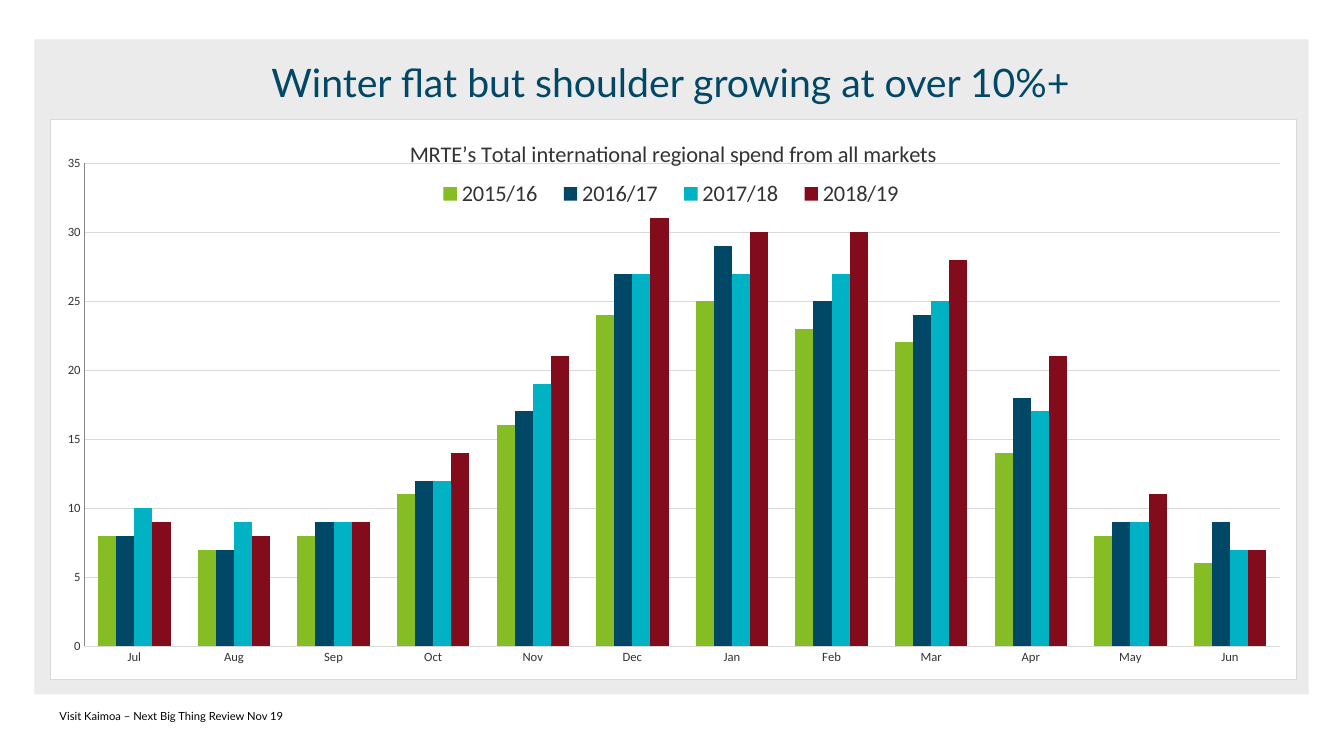
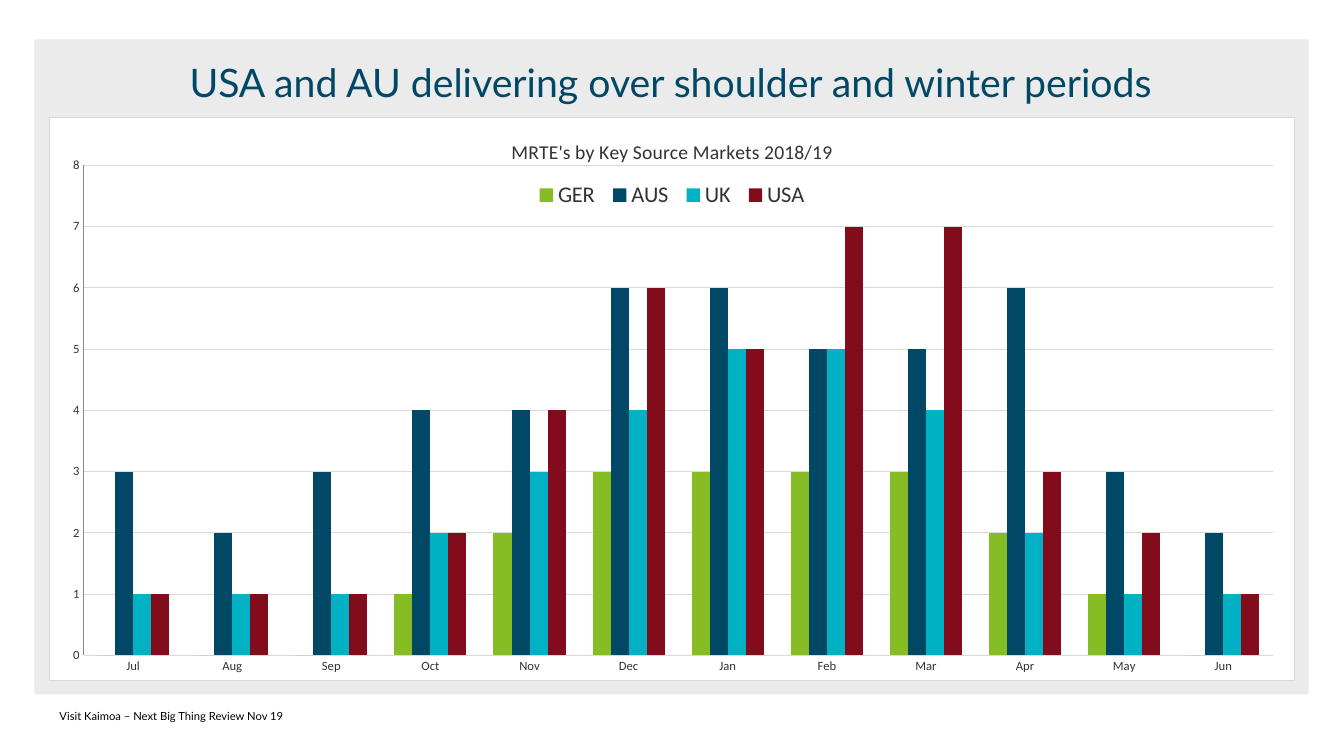
"""Build two slides of monthly visitor-spend column charts."""
from lxml import etree
from pptx import Presentation
from pptx.chart.data import CategoryChartData
from pptx.dml.color import RGBColor
from pptx.enum.chart import XL_CHART_TYPE, XL_LEGEND_POSITION, XL_TICK_MARK
from pptx.enum.shapes import MSO_SHAPE
from pptx.enum.text import MSO_ANCHOR, PP_ALIGN
from pptx.oxml import parse_xml
from pptx.oxml.ns import nsdecls, qn
from pptx.util import Inches, Pt

COLUMNS = XL_CHART_TYPE.COLUMN_CLUSTERED
BOTTOM = XL_LEGEND_POSITION.BOTTOM
NO_TICK = XL_TICK_MARK.NONE
RECTANGLE = MSO_SHAPE.RECTANGLE
TOP, MIDDLE = MSO_ANCHOR.TOP, MSO_ANCHOR.MIDDLE
CENTER, LEFT = PP_ALIGN.CENTER, PP_ALIGN.LEFT

BLACK = RGBColor(0x00, 0x00, 0x00)
WHITE = RGBColor(0xFF, 0xFF, 0xFF)
BAND_GREY = RGBColor(0xEB, 0xEB, 0xEB)
GRID_GREY = RGBColor(0xD9, 0xD9, 0xD9)
AXIS_GREY = RGBColor(0x88, 0x88, 0x88)
TEXT_GREY = RGBColor(0x33, 0x33, 0x33)
NAVY = RGBColor(0x00, 0x48, 0x66)
SERIES_COLORS = (RGBColor(0x86, 0xBC, 0x24), NAVY,
                 RGBColor(0x00, 0xB2, 0xC4), RGBColor(0x82, 0x0C, 0x1C))
TITLE_FONT, CHART_FONT = "Lato", "Calibri"

FOOTER = "Visit Kaimoa – Next Big Thing Review Nov 19"
MONTHS = ("Jul", "Aug", "Sep", "Oct", "Nov", "Dec",
          "Jan", "Feb", "Mar", "Apr", "May", "Jun")
SLIDES = [
    {
        "title": "Winter flat but shoulder growing at over 10%+",
        "chart_title": "MRTE’s Total international regional spend from all markets",
        "title_size": 16,
        "box": (0.5, 1.18, 12.36, 5.57),
        "axis": (35, 5),
        "plot_percent": (2.7, 7.8, 96, 86.2),
        "title_percent": (28.5, 2.8),
        "legend_percent": (30, 10.8, 39.6, 5),
        "series": {
            "2015/16": (8, 7, 8, 11, 16, 24, 25, 23, 22, 14, 8, 6),
            "2016/17": (8, 7, 9, 12, 17, 27, 29, 25, 24, 18, 9, 9),
            "2017/18": (10, 9, 9, 12, 19, 27, 27, 27, 25, 17, 9, 7),
            "2018/19": (9, 8, 9, 14, 21, 31, 30, 30, 28, 21, 11, 7),
        },
    },
    {
        "title": "USA and AU delivering over shoulder and winter periods",
        "chart_title": "MRTE's by Key Source Markets 2018/19",
        "title_size": 14,
        "box": (0.49, 1.16, 12.35, 5.6),
        "axis": (8, 1),
        "plot_percent": (2.7, 8.5, 95.6, 87),
        "title_percent": (36.8, 3.1),
        "legend_percent": (38.5, 11.3, 23, 5),
        "series": {
            "GER": (0, 0, 0, 1, 2, 3, 3, 3, 3, 2, 1, 0),
            "AUS": (3, 2, 3, 4, 4, 6, 6, 5, 5, 6, 3, 2),
            "UK": (1, 1, 1, 2, 3, 4, 5, 5, 4, 2, 1, 1),
            "USA": (1, 1, 1, 2, 4, 6, 5, 7, 7, 3, 2, 1),
        },
    },
]


def place(shape, *box):
    """Set left, top, width and height in inches."""
    shape.left, shape.top, shape.width, shape.height = map(Inches, box)


def style_font(font, name, size, color):
    """Set the face, size and colour of a font."""
    font.name, font.size, font.bold = name, Pt(size), False
    font.color.rgb = color


def write(shape, text, size, color, align, anchor):
    """Fill a shape with one line of text and no insets."""
    tf = shape.text_frame
    tf.text = text
    tf.word_wrap = True
    tf.vertical_anchor = anchor
    tf.margin_left = tf.margin_top = tf.margin_right = tf.margin_bottom = 0
    p = tf.paragraphs[0]
    p.alignment = align
    style_font(p.runs[0].font, TITLE_FONT, size, color)


def set_layout(chart, tag, percents, inner=False):
    """Place a chart part by percentages of the chart area."""
    element = chart.element.find(".//" + qn(tag))
    for old in element.findall(qn("c:layout")):
        element.remove(old)
    layout = parse_xml(f"<c:layout {nsdecls('c')}><c:manualLayout/></c:layout>")
    values = [("layoutTarget", "inner")] if inner else []
    values += [("xMode", "edge"), ("yMode", "edge")]
    values += [(side, round(percent / 100, 4))
               for side, percent in zip("xywh", percents)]
    for name, value in values:
        etree.SubElement(layout[0], qn(f"c:{name}")).set("val", str(value))
    overlay = element.find(qn("c:overlay"))
    if overlay is None:
        element.insert(0, layout)
    else:
        overlay.addprevious(layout)


def fill_chart_area(chart):
    """Give the chart a white ground and a thin grey border."""
    chart.element.find(qn("c:chart")).addnext(parse_xml(
        f'<c:spPr {nsdecls("c", "a")}>'
        f'<a:solidFill><a:srgbClr val="{WHITE}"/></a:solidFill>'
        f'<a:ln w="{Pt(0.75)}"><a:solidFill><a:srgbClr val="{GRID_GREY}"/>'
        '</a:solidFill></a:ln></c:spPr>'))


def style_line(line, color):
    """Give a chart line its colour and width."""
    line.color.rgb = color
    line.width = Pt(0.75)


def style_axis(axis, line_color):
    """Format an axis line and its labels."""
    axis.major_tick_mark = axis.minor_tick_mark = NO_TICK
    style_font(axis.tick_labels.font, CHART_FONT, 9, TEXT_GREY)
    style_line(axis.format.line, line_color)


def add_column_chart(s, content):
    """Add the monthly column chart."""
    data = CategoryChartData(number_format="#,##0")
    data.categories = MONTHS
    for name, values in content["series"].items():
        data.add_series(name, values)
    chart = s.shapes.add_chart(COLUMNS, *map(Inches, content["box"]), data).chart
    style_font(chart.font, CHART_FONT, 10, BLACK)
    fill_chart_area(chart)

    tf = chart.chart_title.text_frame
    tf.text = content["chart_title"]
    style_font(tf.paragraphs[0].runs[0].font, CHART_FONT,
               content["title_size"], TEXT_GREY)

    chart.has_legend = True
    chart.legend.position = BOTTOM
    chart.legend.include_in_layout = True
    style_font(chart.legend.font, CHART_FONT, 16, TEXT_GREY)

    set_layout(chart, "c:title", content["title_percent"])
    set_layout(chart, "c:legend", content["legend_percent"])
    set_layout(chart, "c:plotArea", content["plot_percent"], inner=True)

    style_axis(chart.category_axis, GRID_GREY)
    axis = chart.value_axis
    style_axis(axis, AXIS_GREY)
    axis.minimum_scale = 0
    axis.maximum_scale, axis.major_unit = content["axis"]
    style_line(axis.major_gridlines.format.line, GRID_GREY)

    plot = chart.plots[0]
    plot.gap_width, plot.overlap = 150, 0
    plot.vary_by_categories = False
    for series, color in zip(plot.series, SERIES_COLORS):
        series.format.fill.solid()
        series.format.fill.fore_color.rgb = color


def add_frame(s, title):
    """Add the grey band, slide title and footer."""
    band = s.shapes.add_shape(RECTANGLE, 0, 0, 0, 0)
    place(band, 0.34, 0.39, 12.64, 6.5)
    band.shadow.inherit = False
    band.fill.solid()
    band.fill.fore_color.rgb = BAND_GREY
    band.line.fill.background()
    s.shapes.title.element.addprevious(band.element)

    place(s.shapes.title, 0.59, 0.59, 12.12, 0.45)
    write(s.shapes.title, title, 28, NAVY, CENTER, MIDDLE)
    footer = s.shapes.add_textbox(0, 0, 0, 0)
    place(footer, 0.59, 7.04, 4.5, 0.29)
    write(footer, FOOTER, 8, BLACK, LEFT, TOP)


def main():
    """Build and save the presentation."""
    prs = Presentation()
    prs.slide_width, prs.slide_height = Inches(13.33), Inches(7.5)
    for content in SLIDES:
        s = prs.slides.add_slide(prs.slide_layouts[5])
        add_frame(s, content["title"])
        add_column_chart(s, content)
    prs.save("out.pptx")


if __name__ == "__main__":
    main()
